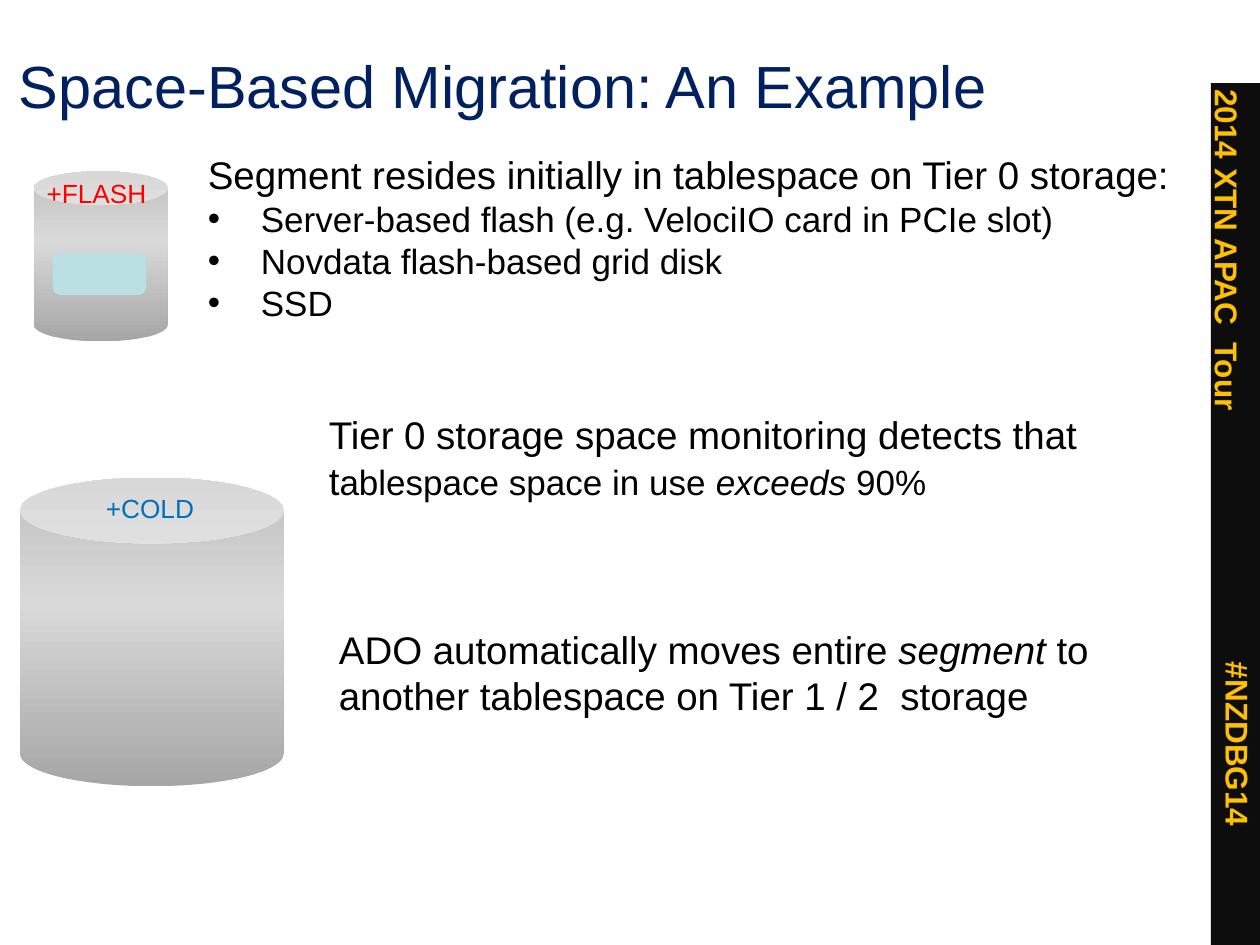
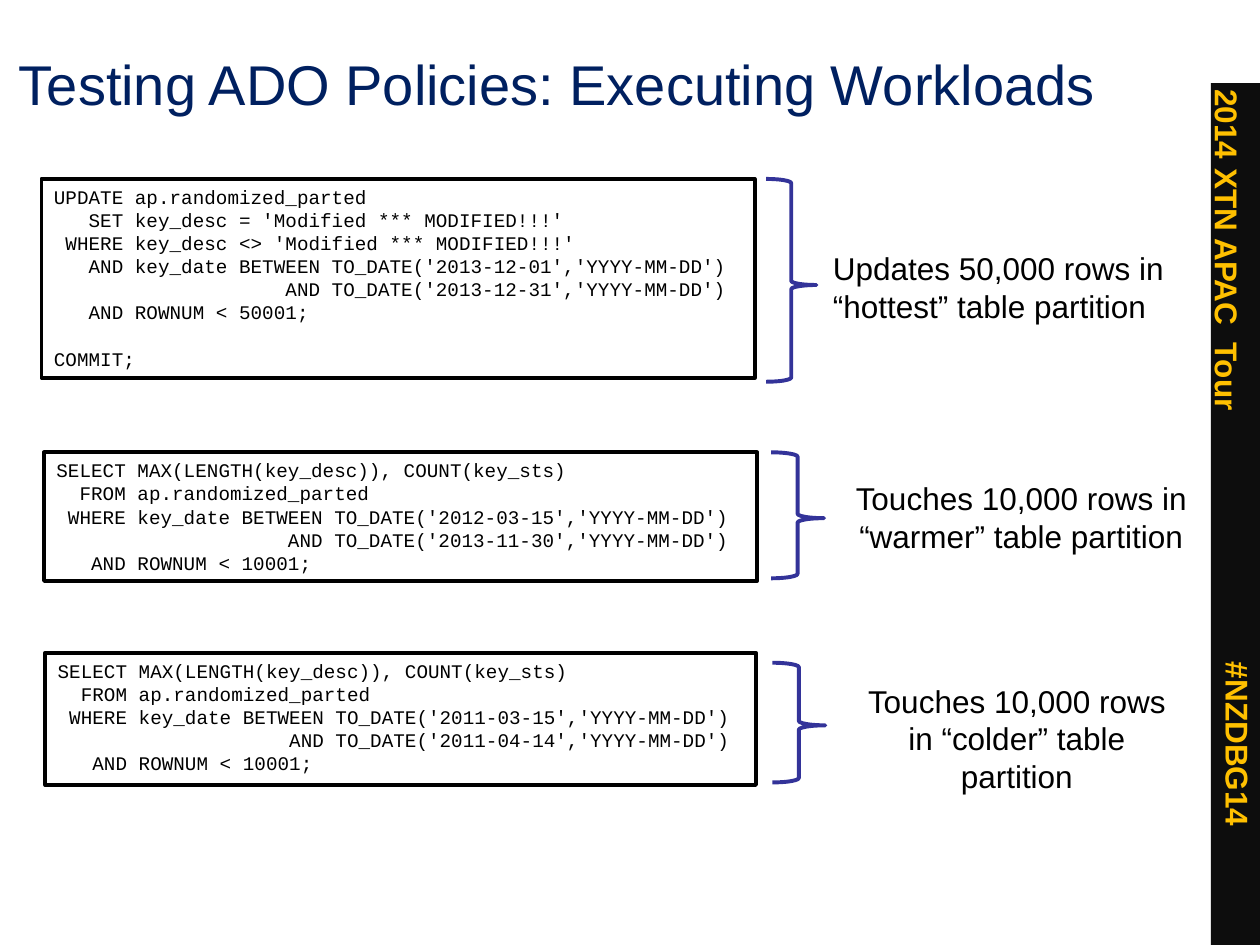
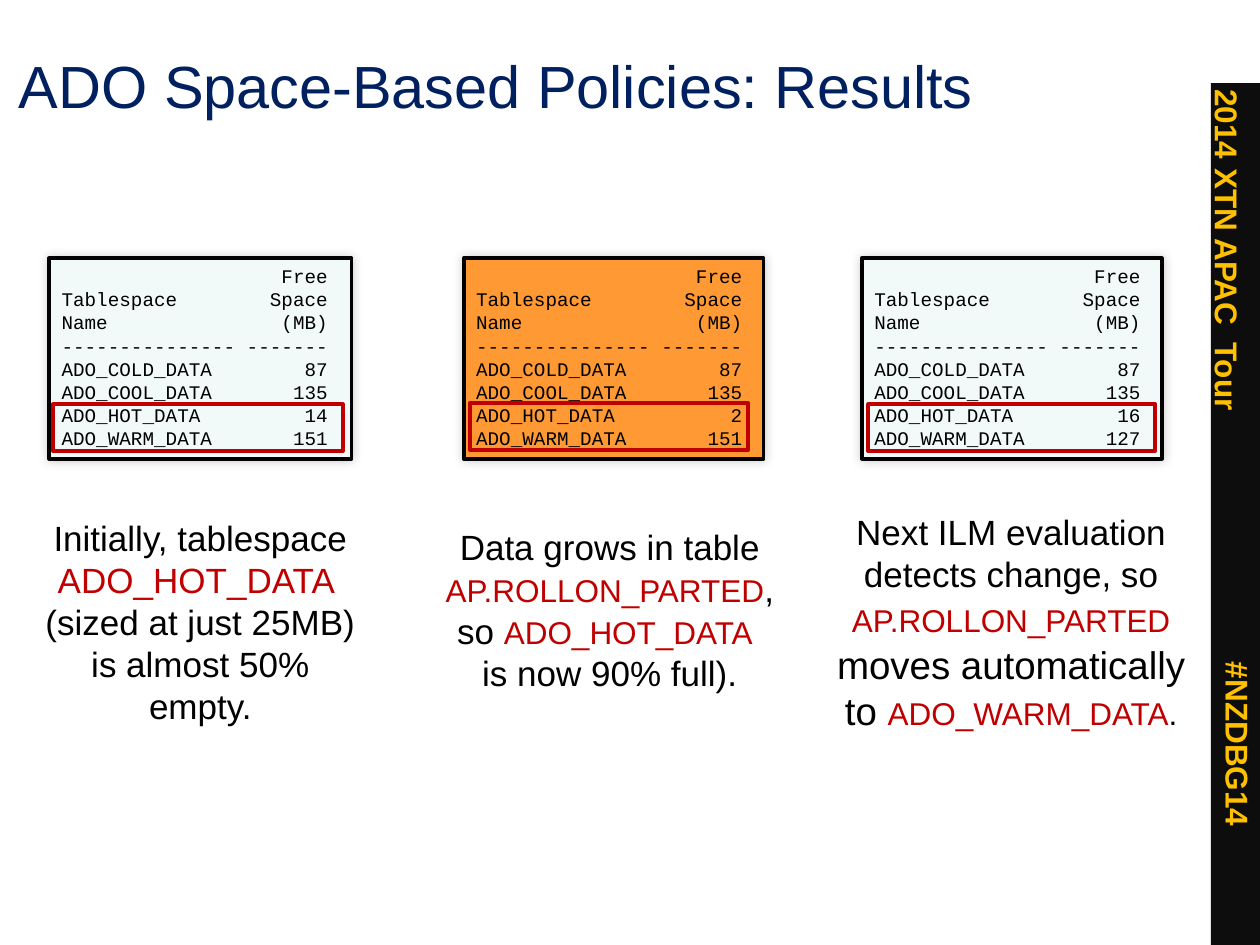
"""Build three slides on automatic data optimization policies."""
from copy import deepcopy

from pptx import Presentation
from pptx.dml.color import RGBColor
from pptx.enum.shapes import MSO_SHAPE
from pptx.enum.text import MSO_ANCHOR, PP_ALIGN
from pptx.oxml import parse_xml
from pptx.oxml.ns import nsdecls, qn
from pptx.util import Inches, Pt

RECT, ROUND = MSO_SHAPE.RECTANGLE, MSO_SHAPE.ROUNDED_RECTANGLE
CAN, BRACE = MSO_SHAPE.CAN, MSO_SHAPE.RIGHT_BRACE
LEFT, CENTER, TOP = PP_ALIGN.LEFT, PP_ALIGN.CENTER, MSO_ANCHOR.TOP
SANS, MONO = "Arial", "Courier New"
BLACK, NAVY, GOLD, RED = "000000", "002060", "FFC000", "C00000"
TIGHT, SNUG, WIDE = (0, 0), (0.07, 0.04), (0.1, 0.05)
SHADE = (
    f'<a:effectLst {nsdecls("a")}><a:outerShdw blurRad="76200" dist="0" dir="13500000">'
    '<a:srgbClr val="000000"><a:alpha val="20000"/></a:srgbClr></a:outerShdw></a:effectLst>'
)
hue = RGBColor.from_string


def write(box, paras, size, color=BLACK, face=SANS, inset=SNUG, align=LEFT, bold=None, wrap=True):
    """Fill a box with paragraphs; a run is text or (text, size, colour, italic)."""
    frame = box.text_frame
    frame.word_wrap, frame.vertical_anchor = wrap, TOP
    frame.margin_left = frame.margin_right = Inches(inset[0])
    frame.margin_top = frame.margin_bottom = Inches(inset[1])
    for i, runs in enumerate(paras):
        para = frame.add_paragraph() if i else frame.paragraphs[0]
        para.alignment = align
        font = para.font
        font.size, font.name, font.bold = Pt(size), face, bold
        font.color.rgb = hue(color)
        for item in [runs] if isinstance(runs, str) else runs:
            run = para.add_run()
            if isinstance(item, str):
                run.text = item
                continue
            run.text, points, tint, slant = (item + (None,) * 3)[:4]
            if points:
                run.font.size = Pt(points)
            if tint:
                run.font.color.rgb = hue(tint)
            run.font.italic = slant
    return frame


def draw(slide, kind, place, fill=None, line=None):
    """Add a preset shape with a plain fill and outline, or none."""
    shape = slide.shapes.add_shape(kind, *map(Inches, place))
    shape.shadow.inherit = False
    if fill:
        shape.fill.solid()
        shape.fill.fore_color.rgb = hue(fill)
    else:
        shape.fill.background()
    if line:
        shape.line.color.rgb = hue(line)
        shape.line.width = Pt(2.25)
    else:
        shape.line.fill.background()
    return shape


deck = Presentation()
deck.slide_width, deck.slide_height = Inches(10), Inches(7.5)

titles = [
    ("Space-Based Migration: An Example", 34),
    ("Testing ADO Policies: Executing Workloads", 32),
    ("ADO Space-Based Policies: Results", 34),
]
for name, size in titles:
    slide = deck.slides.add_slide(deck.slide_layouts[5])
    title = slide.shapes.title
    title.left, title.top, title.width, title.height = map(Inches, (0.08, 0.35, 9.05, 0.73))
    write(title, [name], size, NAVY)
    draw(slide, RECT, (9.61, 0.66, 0.4, 6.84), "0D0D0D")
    for place, label in [
        ((8.24, 1.91, 3, 0.4), "2014 XTN APAC  Tour"),
        ((9.06, 5.72, 1.53, 0.4), "#NZDBG14"),
    ]:
        tag = slide.shapes.add_textbox(*map(Inches, place))
        tag.rotation = 90
        write(tag, [label], 18, GOLD, inset=WIDE, bold=True, wrap=False)
tiers, loads, results = deck.slides

notes = [
    ((2.54, 3.22, 6.6, 0.81), [[
        "Tier 0 storage space monitoring detects that t",
        ("ablespace space in use ", 20), ("exceeds", 20, None, True), (" 90%", 20)]]),
    ((2.62, 4.93, 6.26, 0.83), [[
        "ADO automatically moves entire ", ("segment", None, None, True),
        " to another tablespace on Tier 1 / 2  storage"]]),
    ((1.58, 1.16, 8.16, 1.44), [
        "Segment resides initially in tablespace on Tier 0 storage:",
        "Server-based flash (e.g. VelociIO card in PCIe slot)",
        "Novdata flash-based grid disk",
        "SSD"]),
]
for place, paras in notes:
    box = tiers.shapes.add_textbox(*map(Inches, place))
    frame = write(box, paras, 22)
for para in frame.paragraphs[1:]:
    para.font.size = Pt(20)
    props = para._p.get_or_add_pPr()
    props.set("marL", str(Inches(0.42)))
    props.set("indent", str(Inches(-0.42)))
    for mark in ('buFont {} typeface="Arial"', 'buChar {} char="•"'):
        bullet = parse_xml(f'<a:{mark.format(nsdecls("a"))}/>')
        props.find(qn("a:defRPr")).addprevious(bullet)

for place in [(0.27, 1.36, 1.06, 1.35), (0.16, 3.79, 2.09, 2.45)]:
    can = draw(tiers, CAN, place)
    can.fill.gradient()
    can.fill.gradient_angle = 90
    stops = can._element.spPr.find(".//" + qn("a:gsLst"))
    stops.insert(1, deepcopy(stops[0]))
    shades = [(0, "A6A6A6"), (0.59, "D9D9D9"), (1, "BFBFBF")]
    for stop, (spot, shade) in zip(can.fill.gradient_stops, shades):
        stop.position, stop.color.rgb = spot, hue(shade)
draw(tiers, ROUND, (0.42, 2.01, 0.74, 0.33), "BBE0E3")
for place, label, color in [
    ((0.37, 1.41, 0.9, 0.25), "+FLASH", "FF0000"),
    ((0.84, 3.91, 0.9, 0.4), "+COLD", "0070C0"),
]:
    box = tiers.shapes.add_textbox(*map(Inches, place))
    write(box, [label], 15, color, inset=TIGHT)

update = [
    "UPDATE ap.randomized_parted",
    "   SET key_desc = 'Modified *** MODIFIED!!!'",
    " WHERE key_desc <> 'Modified *** MODIFIED!!!'",
    "   AND key_date BETWEEN TO_DATE('2013-12-01','YYYY-MM-DD')",
    "                    AND TO_DATE('2013-12-31','YYYY-MM-DD')",
    "   AND ROWNUM < 50001;",
    " ",
    "COMMIT;",
]
warm, cold = [
    [
        "SELECT MAX(LENGTH(key_desc)), COUNT(key_sts)",
        "  FROM ap.randomized_parted",
        f" WHERE key_date BETWEEN TO_DATE('{start}','YYYY-MM-DD')",
        f"                    AND TO_DATE('{end}','YYYY-MM-DD')",
        "   AND ROWNUM < 10001;",
    ]
    for start, end in [("2012-03-15", "2013-11-30"), ("2011-03-15", "2011-04-14")]
]
jobs = [
    (update, (0.33, 1.42, 5.66, 1.58), (6.08, 1.42, 0.4, 1.61), (6.61, 1.98, 2.75, 0.8),
     "Updates 50,000 rows in “hottest” table partition", LEFT),
    (warm, (0.35, 3.59, 5.66, 1.02), (6.12, 3.59, 0.42, 1), (6.79, 3.8, 2.63, 0.65),
     "Touches 10,000 rows in “warmer” table partition", CENTER),
    (cold, (0.36, 5.18, 5.64, 1.05), (6.13, 5.26, 0.42, 0.95), (6.78, 5.41, 2.58, 0.68),
     "Touches 10,000 rows in “colder” table partition", CENTER),
]
for code, pane, curl, spot, label, align in jobs:
    write(draw(loads, RECT, pane, line=BLACK), code, 11, face=MONO, inset=WIDE)
    brace = draw(loads, BRACE, curl, line="333399")
    brace.adjustments[0], brace.adjustments[1] = 0.083, 0.523
    box = loads.shapes.add_textbox(*map(Inches, spot))
    write(box, [label], 18, inset=TIGHT, align=align)

stages = [
    (0.39, 2.4, "F1F9F9", 14, 151, (0.42, 3.21, 2.3, 0.37), (0.33, 4.1, 2.52, 1.65),
     ["Initially, tablespace ", ("ADO_HOT_DATA ", None, RED),
      " (sized at just 25MB) is almost 50% empty."]),
    (3.68, 2.38, "FF9933", 2, 151, (3.73, 3.2, 2.21, 0.37), (3.49, 4.17, 2.7, 1.51),
     ["Data grows in table ", ("AP.ROLLON_PARTED", 18, RED), ", so ",
      ("ADO_HOT_DATA", 18, RED), "  is now 90% full)."]),
    (6.84, 2.38, "F1F9F9", 16, 127, (6.89, 3.21, 2.28, 0.37), (6.6, 4.05, 2.85, 2.19),
     ["Next ILM evaluation detects change, so ", ("AP.ROLLON_PARTED", 18, RED),
      (" moves automatically to ", 22), ("ADO_WARM_DATA", 18, RED), (".", 18)]),
]
for left, width, fill, hot, mild, frame, spot, label in stages:
    rows = [
        ("", "Free"), ("Tablespace", "Space"), ("Name", "(MB)"), ("-" * 15, "-" * 7),
        ("ADO_COLD_DATA", 87), ("ADO_COOL_DATA", 135),
        ("ADO_HOT_DATA", hot), ("ADO_WARM_DATA", mild),
    ]
    pane = draw(results, RECT, (left, 2.05, width, 1.59), fill, BLACK)
    props = pane._element.spPr
    props.replace(props.find(qn("a:effectLst")), parse_xml(SHADE))
    write(pane, [f"{name:<15}{free:>8}" for name, free in rows], 11, face=MONO, inset=WIDE)
    draw(results, RECT, frame, line=RED)
    box = results.shapes.add_textbox(*map(Inches, spot))
    write(box, [label], 20, inset=TIGHT, align=CENTER)

deck.save("out.pptx")
